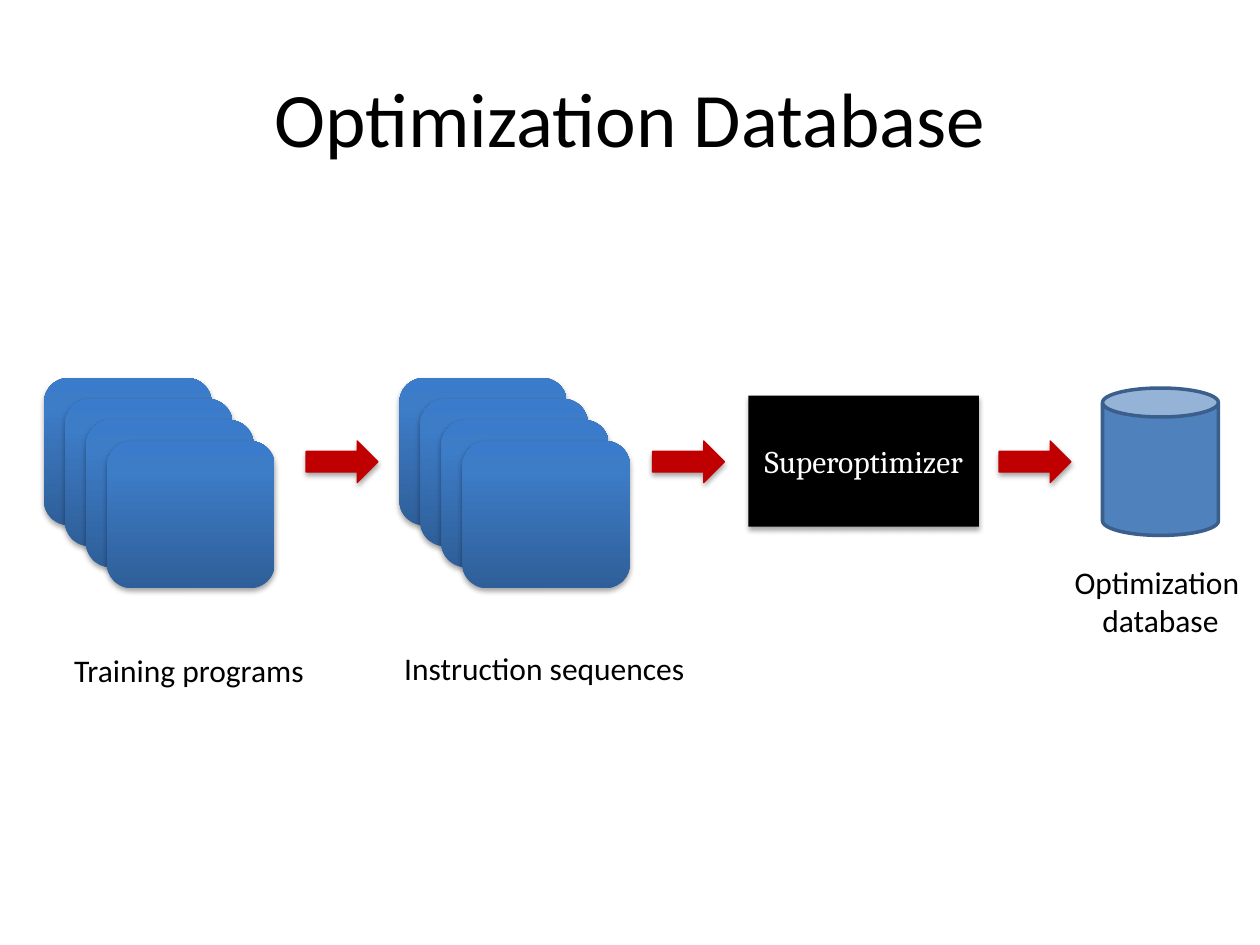
import copy
from dataclasses import dataclass

import pptx
import pptx.dml.color
import pptx.enum.shapes
import pptx.enum.text
import pptx.oxml
import pptx.oxml.ns
import pptx.util

Inches, Pt = pptx.util.Inches, pptx.util.Pt
RGBColor = pptx.dml.color.RGBColor
MSO_SHAPE = pptx.enum.shapes.MSO_SHAPE
PP_ALIGN = pptx.enum.text.PP_ALIGN
MSO_ANCHOR = pptx.enum.text.MSO_ANCHOR
qn = pptx.oxml.ns.qn

BLACK = RGBColor(0x00, 0x00, 0x00)
WHITE = RGBColor(0xFF, 0xFF, 0xFF)
RED = RGBColor(0xC0, 0x00, 0x00)
BLUE = RGBColor(0x4F, 0x81, 0xBD)
DARK_BLUE = RGBColor(0x3A, 0x5F, 0x8C)
CARD_STOPS = (
    (0, RGBColor(0x2F, 0x5F, 0x99)),
    (0.8, RGBColor(0x3D, 0x7C, 0xC7)),
    (1, RGBColor(0x3A, 0x7C, 0xCB)),
)

CARDS_PER_STACK = 4
CARD_OFFSET = 1 / 6
STACK_TOP = 3
ARROW_LEFT, ARROW_STEP, ARROW_COUNT = 2.43, 2.75, 3


@dataclass
class Box:
    left: float
    top: float
    width: float
    height: float

    def emu(self) -> tuple:
        return tuple(Inches(v) for v in (self.left, self.top, self.width, self.height))


@dataclass
class Label:
    text: str
    box: Box
    size: int = 18
    align: PP_ALIGN = PP_ALIGN.LEFT
    anchor: MSO_ANCHOR = MSO_ANCHOR.TOP
    wrap: bool = False


LABELS = (
    Label("Optimization Database", Box(0.5, 0.3, 9, 1.25), 44,
          PP_ALIGN.CENTER, MSO_ANCHOR.MIDDLE, True),
    Label("Training programs", Box(0.49, 5.12, 2.04, 0.4)),
    Label("Instruction sequences", Box(3.11, 5.1, 2.45, 0.4)),
    Label("Optimization \ndatabase", Box(8.42, 4.42, 1.58, 0.71), align=PP_ALIGN.CENTER),
)


def add_shape(s, kind: MSO_SHAPE, box: Box, fill: RGBColor = None):
    sp = s.shapes.add_shape(kind, *box.emu())
    sp.shadow.inherit = False
    sp.line.fill.background()
    if fill is not None:
        sp.fill.solid()
        sp.fill.fore_color.rgb = fill
    return sp


def set_line(sp, color: RGBColor, width: float) -> None:
    sp.line.color.rgb = color
    sp.line.width = Pt(width)


def add_shadow(sp) -> None:
    effects = sp._element.spPr.find(qn("a:effectLst"))
    effects.append(pptx.oxml.parse_xml(
        f'<a:outerShdw {pptx.oxml.ns.nsdecls("a")} blurRad="{Pt(3.1)}" '
        f'dist="{Pt(1.8)}" dir="5400000" rotWithShape="0">'
        '<a:srgbClr val="000000"><a:alpha val="35000"/></a:srgbClr></a:outerShdw>'))


def format_text(tf, text: str, font: str, size: int, color: RGBColor, align: PP_ALIGN) -> None:
    tf.text = text
    for p in tf.paragraphs:
        p.alignment = align
        for r in p.runs:
            r.font.name = font
            r.font.size = Pt(size)
            r.font.color.rgb = color


def add_label(s, label: Label) -> None:
    tf = s.shapes.add_textbox(*label.box.emu()).text_frame
    tf.word_wrap = label.wrap
    tf.vertical_anchor = label.anchor
    format_text(tf, label.text, "Calibri", label.size, BLACK, label.align)


def add_card(s, box: Box) -> None:
    sp = add_shape(s, MSO_SHAPE.ROUNDED_RECTANGLE, box)
    sp.fill.gradient()
    sp.fill.gradient_angle = 90
    stop_list = next(sp._element.spPr.iter(qn("a:gsLst")))
    stop_list.append(copy.deepcopy(stop_list[0]))
    for stop, (position, color) in zip(sp.fill.gradient_stops, CARD_STOPS):
        stop.position = position
        stop.color.rgb = color
    add_shadow(sp)


def add_stack(s, left: float) -> None:
    for i in range(CARDS_PER_STACK):
        shift = i * CARD_OFFSET
        add_card(s, Box(left + shift, STACK_TOP + shift, 1.33, 1.17))


def add_arrow(s, left: float) -> None:
    sp = add_shape(s, MSO_SHAPE.RIGHT_ARROW, Box(left, 3.5, 0.57, 0.33), RED)
    set_line(sp, RED, 0.75)
    add_shadow(sp)


def main() -> None:
    prs = pptx.Presentation()
    prs.slide_width, prs.slide_height = Inches(10), Inches(7.5)
    s = prs.slides.add_slide(prs.slide_layouts[6])

    # Stacks of programs and sequences
    for left in (0.35, 3.17):
        add_stack(s, left)

    # Arrows between the stages
    for i in range(ARROW_COUNT):
        add_arrow(s, ARROW_LEFT + i * ARROW_STEP)

    # Superoptimizer
    sp = add_shape(s, MSO_SHAPE.RECTANGLE, Box(5.94, 3.14, 1.83, 1.04), BLACK)
    add_shadow(sp)
    tf = sp.text_frame
    tf.margin_left = tf.margin_right = tf.margin_top = tf.margin_bottom = 0
    tf.vertical_anchor = MSO_ANCHOR.MIDDLE
    format_text(tf, "Superoptimizer", "Cambria", 18, WHITE, PP_ALIGN.CENTER)

    # Database
    sp = add_shape(s, MSO_SHAPE.CAN, Box(8.75, 3.08, 0.92, 1.17), BLUE)
    set_line(sp, DARK_BLUE, 2)

    # Title and captions
    for label in LABELS:
        add_label(s, label)

    prs.save("out.pptx")


if __name__ == "__main__":
    main()
